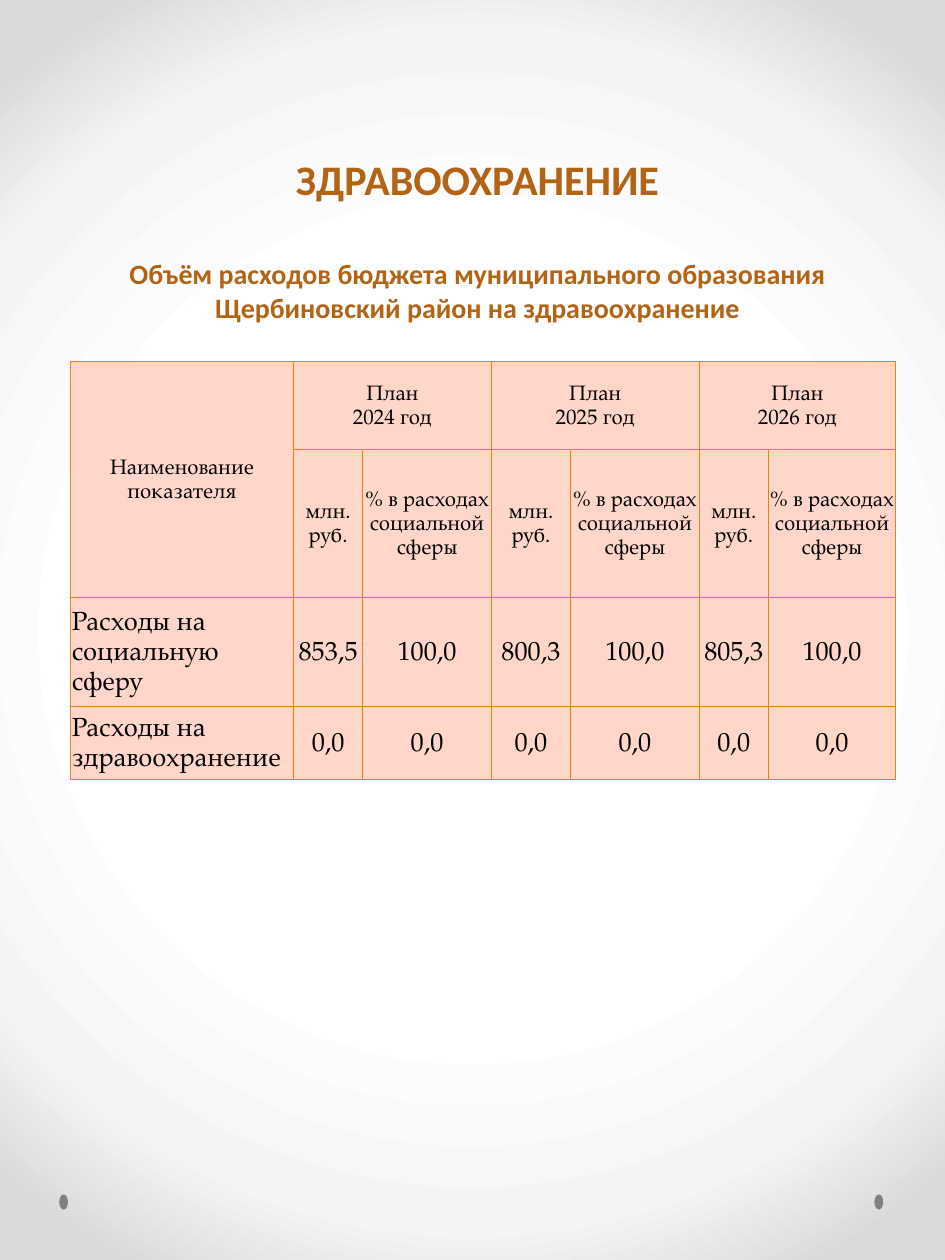
import pptx
import pptx.util
import pptx.oxml
import pptx.oxml.ns
import pptx.dml.color
import pptx.enum.shapes
import pptx.enum.text

In, Pt = pptx.util.Inches, pptx.util.Pt
ALIGN, ANCHOR = pptx.enum.text.PP_ALIGN, pptx.enum.text.MSO_ANCHOR

THEME = {
    "heading_font": "Calibri", "table_font": "TeX Gyre Pagella",
    "heading": "B26314", "text": "000000", "cell": "FFD6C9",
    "border": "E6811C", "dot": "808080",
    "backdrop": [(0, "FFFFFF"), (50, "FFFFFF"), (76, "F4F4F4"), (92, "DADADA"), (100, "DADADA")],
    "title_size": 24, "subtitle_size": 16, "header_size": 12, "value_size": 15,
}
WIDTH, HEIGHT = 7.5, 10
TITLE = "ЗДРАВООХРАНЕНИЕ"
SUBTITLE = "Объём расходов бюджета муниципального образования Щербиновский район на здравоохранение"
INDICATOR = "Наименование показателя"
YEARS = ["2024 год", "2025 год", "2026 год"]
MEASURES = ["млн.\nруб.", "% в расходах социальной сферы"]
RECORDS = [
    ("Расходы на социальную сферу", "853,5", "100,0", "800,3", "100,0", "805,3", "100,0"),
    ("Расходы на здравоохранение", "0,0", "0,0", "0,0", "0,0", "0,0", "0,0"),
]
COLUMNS = [1.77, 0.55, 1.02, 0.63, 1.02, 0.55, 1.01]
ROWS = [0.7, 1.17, 0.87, 0.58]
NS = pptx.oxml.ns.nsdecls("a")


def rgb(name):
    return pptx.dml.color.RGBColor.from_string(THEME[name])


def write(tf, text, size="header_size", font="table_font", color="text",
          bold=False, align=ALIGN.CENTER, spacing=1.15, before=0, append=False):
    for i, line in enumerate(text.split("\n")):
        p = tf.add_paragraph() if append or i else tf.paragraphs[0]
        p.alignment, p.line_spacing, p.space_before = align, spacing, Pt(before)
        r = p.add_run()
        r.text = line
        r.font.name, r.font.size = THEME[font], Pt(THEME[size])
        r.font.bold, r.font.color.rgb = bold, rgb(color)


def style_cell(cell):
    cell.margin_left = cell.margin_top = cell.margin_right = In(0.01)
    cell.margin_bottom = 0
    cell.vertical_anchor = ANCHOR.MIDDLE
    cell.fill.solid()
    cell.fill.fore_color.rgb = rgb("cell")
    tc_pr = cell._tc.get_or_add_tcPr()
    for i, side in enumerate("LRTB"):
        tc_pr.insert(i, pptx.oxml.parse_xml(
            f'<a:ln{side} {NS} w="{Pt(0.75)}"><a:solidFill>'
            f'<a:srgbClr val="{THEME["border"]}"/></a:solidFill></a:ln{side}>'))


def paint_background(s):
    s.background.fill.gradient()
    old = s.element.find(".//" + pptx.oxml.ns.qn("a:gradFill"))
    stops = "".join(f'<a:gs pos="{pos * 1000}"><a:srgbClr val="{color}"/></a:gs>'
                    for pos, color in THEME["backdrop"])
    old.getparent().replace(old, pptx.oxml.parse_xml(
        f'<a:gradFill {NS} rotWithShape="1"><a:gsLst>{stops}</a:gsLst><a:path path="circle">'
        '<a:fillToRect l="50000" t="50000" r="50000" b="50000"/></a:path></a:gradFill>'))


def add_dots(s):
    for left in (0.47, 6.94):
        sp = s.shapes.add_shape(pptx.enum.shapes.MSO_SHAPE.OVAL,
                                In(left), In(9.48), In(0.07), In(0.12))
        sp.shadow.inherit = False
        sp.fill.solid()
        sp.fill.fore_color.rgb = rgb("dot")
        sp.line.fill.background()


def add_heading(s):
    sp = s.shapes.title
    sp.left, sp.top, sp.width, sp.height = In(0.68), In(1.22), In(6.22), In(1.35)
    tf = sp.text_frame
    tf.word_wrap, tf.vertical_anchor = True, ANCHOR.TOP
    tf.auto_size = pptx.enum.text.MSO_AUTO_SIZE.NONE
    tf.margin_left = tf.margin_top = tf.margin_right = tf.margin_bottom = 0
    look = dict(font="heading_font", color="heading", bold=True, spacing=1.0)
    write(tf, TITLE, size="title_size", **look)
    write(tf, SUBTITLE, size="subtitle_size", before=30, append=True, **look)


def add_budget_table(s):
    table = s.shapes.add_table(len(ROWS), len(COLUMNS), In(0.56), In(2.87),
                               In(sum(COLUMNS)), In(sum(ROWS))).table
    table.first_row = table.horz_banding = False
    for column, width in zip(table.columns, COLUMNS):
        column.width = In(width)
    for row, height in zip(table.rows, ROWS):
        row.height = In(height)
    for cell in table.iter_cells():
        style_cell(cell)

    table.cell(0, 0).merge(table.cell(1, 0))
    write(table.cell(0, 0).text_frame, INDICATOR)
    for i, year in enumerate(YEARS):
        first = 1 + i * len(MEASURES)
        table.cell(0, first).merge(table.cell(0, first + len(MEASURES) - 1))
        write(table.cell(0, first).text_frame, "План\n" + year)
        for j, measure in enumerate(MEASURES):
            write(table.cell(1, first + j).text_frame, measure)
    for i, record in enumerate(RECORDS, 2):
        for j, value in enumerate(record):
            write(table.cell(i, j).text_frame, value, size="value_size",
                  align=ALIGN.CENTER if j else ALIGN.LEFT)


def main():
    prs = pptx.Presentation()
    prs.slide_width, prs.slide_height = In(WIDTH), In(HEIGHT)
    s = prs.slides.add_slide(prs.slide_layouts[5])
    paint_background(s)
    add_dots(s)
    add_heading(s)
    add_budget_table(s)
    prs.save("out.pptx")


if __name__ == "__main__":
    main()
